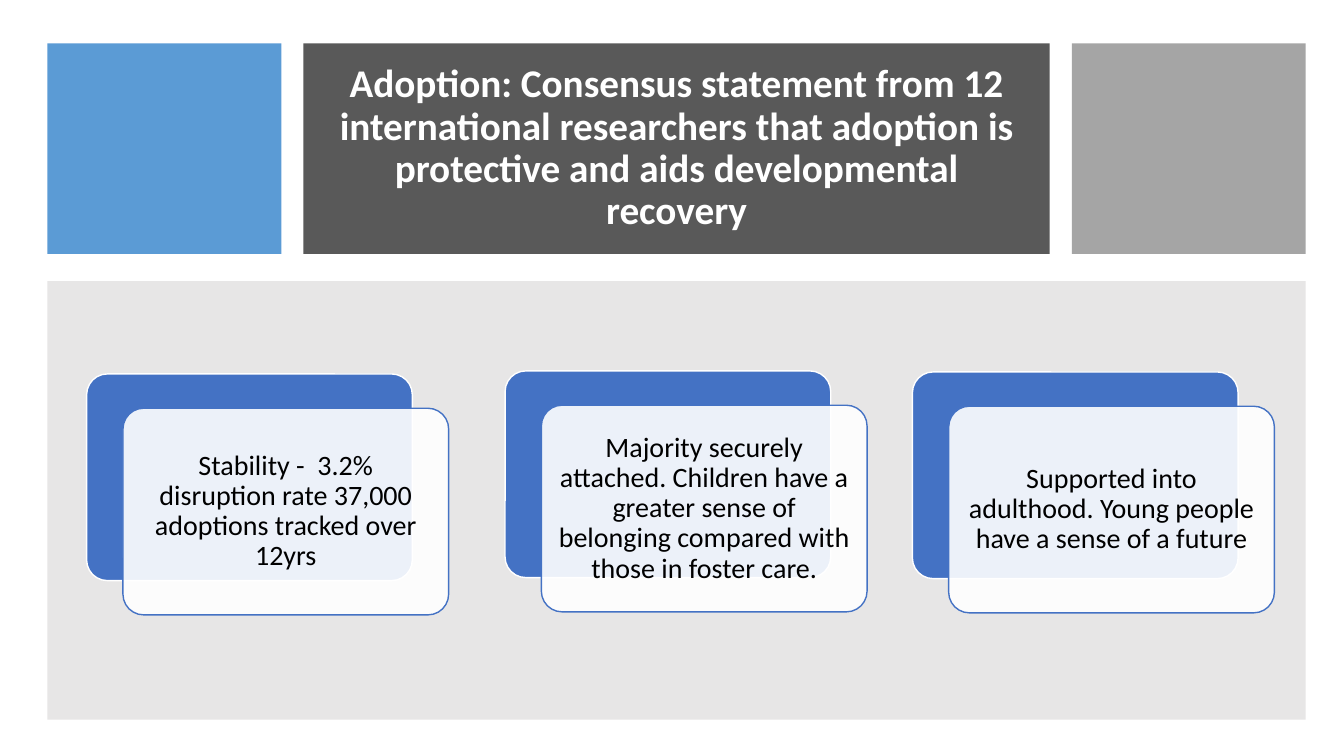
from lxml import etree
from pptx import Presentation
from pptx.dml.color import RGBColor
from pptx.enum.shapes import MSO_SHAPE
from pptx.enum.text import MSO_ANCHOR, PP_ALIGN
from pptx.oxml.ns import qn
from pptx.util import Inches, Pt

RECTANGLE = MSO_SHAPE.RECTANGLE
ROUNDED = MSO_SHAPE.ROUNDED_RECTANGLE
MIDDLE = MSO_ANCHOR.MIDDLE
CENTER = PP_ALIGN.CENTER

WHITE, BLACK = "FFFFFF", "000000"
DARK_GRAY, MID_GRAY, PANEL_GRAY = "595959", "A5A5A5", "E7E6E6"
LIGHT_BLUE, BLUE = "5B9BD5", "4472C4"

TITLE = ("Adoption: Consensus statement from 12 international researchers "
         "that adoption is protective and aids developmental recovery")
# Left and top within the panel, then the wording
FINDINGS = [
    (0.39, 0.92, "Stability -  3.2% disruption rate 37,000 adoptions tracked over 12yrs"),
    (4.54, 0.89, "Majority securely attached. Children have a greater sense of "
                 "belonging compared with those in foster care."),
    (8.58, 0.9, "Supported into adulthood. Young people have a sense of a future"),
]
CARD_WIDTH, CARD_HEIGHT = 3.23, 2.05
CARD_SHIFT_X, CARD_SHIFT_Y = 0.36, 0.34


def rgb(value):
    return RGBColor.from_string(value)


def add_block(slide, kind, left, top, width, height, fill, line=None):
    shape = slide.shapes.add_shape(
        kind, Inches(left), Inches(top), Inches(width), Inches(height))
    shape.shadow.inherit = False
    shape.fill.solid()
    shape.fill.fore_color.rgb = rgb(fill)
    if line:
        shape.line.color.rgb = rgb(line)
        shape.line.width = Pt(1)
    else:
        shape.line.fill.background()
    return shape


def set_opacity(shape, percent):
    color = shape.fill._xPr.find(qn("a:solidFill"))[0]
    etree.SubElement(color, qn("a:alpha"), val=str(percent * 1000))


def write_text(shape, text, margin, size, color, bold=False):
    """Put one centred paragraph in the shape."""
    frame = shape.text_frame
    frame_format = {"word_wrap": True, "vertical_anchor": MIDDLE}
    for side in ("left", "right", "top", "bottom"):
        frame_format[f"margin_{side}"] = Inches(margin)
    for name, value in frame_format.items():
        setattr(frame, name, value)
    paragraph = frame.paragraphs[0]
    paragraph.alignment = CENTER
    paragraph.line_spacing = 0.9
    run = paragraph.add_run()
    run.text = text
    for name, value in {"name": "Calibri", "size": Pt(size), "bold": bold}.items():
        setattr(run.font, name, value)
    run.font.color.rgb = rgb(color)


def add_header(slide, left, top, width, height):
    """Draw the title block between two coloured side blocks."""
    side_width, gap = 2.32, 0.22
    title_width = width - 2 * (side_width + gap)
    add_block(slide, RECTANGLE, left, top, side_width, height, LIGHT_BLUE)
    add_block(slide, RECTANGLE, left + width - side_width, top,
              side_width, height, MID_GRAY)
    title = add_block(slide, RECTANGLE, left + side_width + gap, top,
                      title_width, height, DARK_GRAY)
    write_text(title, TITLE, 0.26, 28, WHITE, bold=True)


def add_card(slide, left, top, text):
    """Draw a blue card with a translucent text card shifted over it."""
    back = add_block(slide, ROUNDED, left, top, CARD_WIDTH, CARD_HEIGHT, BLUE, WHITE)
    front = add_block(slide, ROUNDED, left + CARD_SHIFT_X, top + CARD_SHIFT_Y,
                      CARD_WIDTH, CARD_HEIGHT, WHITE, BLUE)
    for card in (back, front):
        card.adjustments[0] = 0.1
    set_opacity(front, 90)
    write_text(front, text, 0.08, 20, BLACK)


def add_findings(slide, left, top, width, height):
    add_block(slide, RECTANGLE, left, top, width, height, PANEL_GRAY)
    for card_left, card_top, text in FINDINGS:
        add_card(slide, left + card_left, top + card_top, text)


def main():
    presentation = Presentation()
    presentation.slide_width = Inches(13.33)
    presentation.slide_height = Inches(7.5)
    slide = presentation.slides.add_slide(presentation.slide_layouts[6])
    add_header(slide, 0.47, 0.43, 12.48, 2.09)
    add_findings(slide, 0.47, 2.79, 12.48, 4.35)
    presentation.save("out.pptx")


if __name__ == "__main__":
    main()
